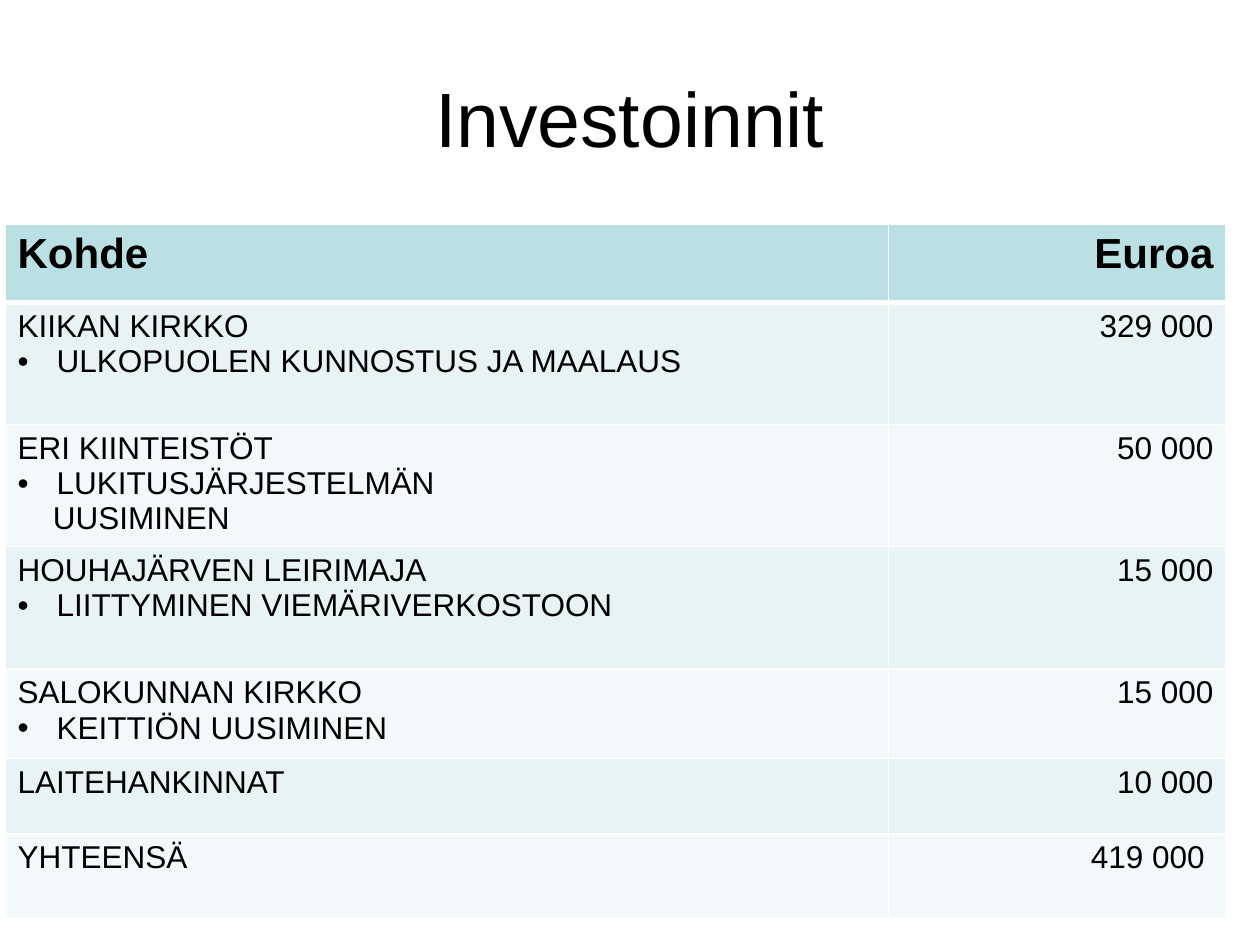
from lxml.etree import SubElement
from pptx import Presentation
from pptx.dml.color import RGBColor
from pptx.enum.text import MSO_ANCHOR, PP_ALIGN
from pptx.oxml.ns import qn
from pptx.util import Inches, Pt

# Content: each row is (target lines, euros, row height)
# A line is (text, style), with style one of plain, bullet, continued
TITLE = "Investoinnit"
HEADER = ([("Kohde", "plain")], "Euroa", 0.62)
INVESTMENTS = [
    ([("KIIKAN KIRKKO", "plain"),
      ("ULKOPUOLEN KUNNOSTUS JA MAALAUS", "bullet")], "329 000", 0.97),
    ([("ERI KIINTEISTÖT", "plain"),
      ("LUKITUSJÄRJESTELMÄN", "bullet"),
      ("UUSIMINEN", "continued")], "50 000", 0.97),
    ([("HOUHAJÄRVEN LEIRIMAJA", "plain"),
      ("LIITTYMINEN VIEMÄRIVERKOSTOON", "bullet")], "15 000", 0.97),
    ([("SALOKUNNAN KIRKKO", "plain"),
      ("KEITTIÖN UUSIMINEN", "bullet")], "15 000", 0.71),
    ([("LAITEHANKINNAT", "plain")], "10 000", 0.6),
    ([("YHTEENSÄ", "plain")], "419 000 ", 0.67),
]
COLUMN_WIDTHS = [7.01, 2.68]
INDENTS = {"plain": (0, 0), "bullet": (0.31, -0.31), "continued": (0.28, 0)}
COLORS = {"text": "000000", "border": "FFFFFF", "header": "BBE0E3",
          "odd": "E7F3F4", "even": "F3F9FA"}
FONT = "Arial"


def write_lines(frame, lines, size=18, bold=False, align=PP_ALIGN.LEFT):
    """Write (text, style) lines into a text frame, one paragraph each."""
    for index, (text, style) in enumerate(lines):
        paragraph = frame.add_paragraph() if index else frame.paragraphs[0]
        paragraph.alignment = align
        run = paragraph.add_run()
        run.text = text
        run.font.name = FONT
        run.font.size = Pt(size)
        run.font.bold = bold
        run.font.color.rgb = RGBColor.from_string(COLORS["text"])
        left, first = INDENTS[style]
        properties = paragraph._p.get_or_add_pPr()
        properties.set("marL", str(Inches(left)))
        properties.set("indent", str(Inches(first)))
        if style == "bullet":
            SubElement(properties, qn("a:buFont"), typeface=FONT)
            SubElement(properties, qn("a:buChar"), char="•")


def add_borders(cell, top=1, bottom=1):
    """Draw the four cell borders, with widths in points."""
    properties = cell._tc.get_or_add_tcPr()
    for side, width in (("L", 1), ("R", 1), ("T", top), ("B", bottom)):
        line = SubElement(properties, qn(f"a:ln{side}"), w=str(Pt(width)))
        fill = SubElement(line, qn("a:solidFill"))
        SubElement(fill, qn("a:srgbClr"), val=COLORS["border"])


presentation = Presentation()
presentation.slide_width = Inches(10)
presentation.slide_height = Inches(7.5)
slide = presentation.slides.add_slide(presentation.slide_layouts[6])

# Investment table
rows = [HEADER] + INVESTMENTS
table = slide.shapes.add_table(
    len(rows), len(COLUMN_WIDTHS), Inches(0.04), Inches(1.78),
    Inches(sum(COLUMN_WIDTHS)), Inches(sum(row[2] for row in rows))).table
for column, width in zip(table.columns, COLUMN_WIDTHS):
    column.width = Inches(width)

for number, (target, euros, height) in enumerate(rows):
    table.rows[number].height = Inches(height)
    is_header = number == 0
    band = "header" if is_header else "odd" if number % 2 else "even"
    contents = [(target, PP_ALIGN.LEFT), ([(euros, "plain")], PP_ALIGN.RIGHT)]
    for cell, (lines, align) in zip(table.rows[number].cells, contents):
        # The rule under the header is shared with the first row
        add_borders(cell, top=3 if number == 1 else 1,
                    bottom=3 if is_header else 1)
        cell.fill.solid()
        cell.fill.fore_color.rgb = RGBColor.from_string(COLORS[band])
        write_lines(cell.text_frame, lines, size=24 if is_header else 18,
                    bold=is_header, align=align)

# Title
heading = slide.shapes.add_textbox(
    Inches(0.5), Inches(0.3), Inches(9), Inches(1.25)).text_frame
heading.word_wrap = True
heading.vertical_anchor = MSO_ANCHOR.MIDDLE
write_lines(heading, [(TITLE, "plain")], size=44, align=PP_ALIGN.CENTER)

presentation.save("out.pptx")
